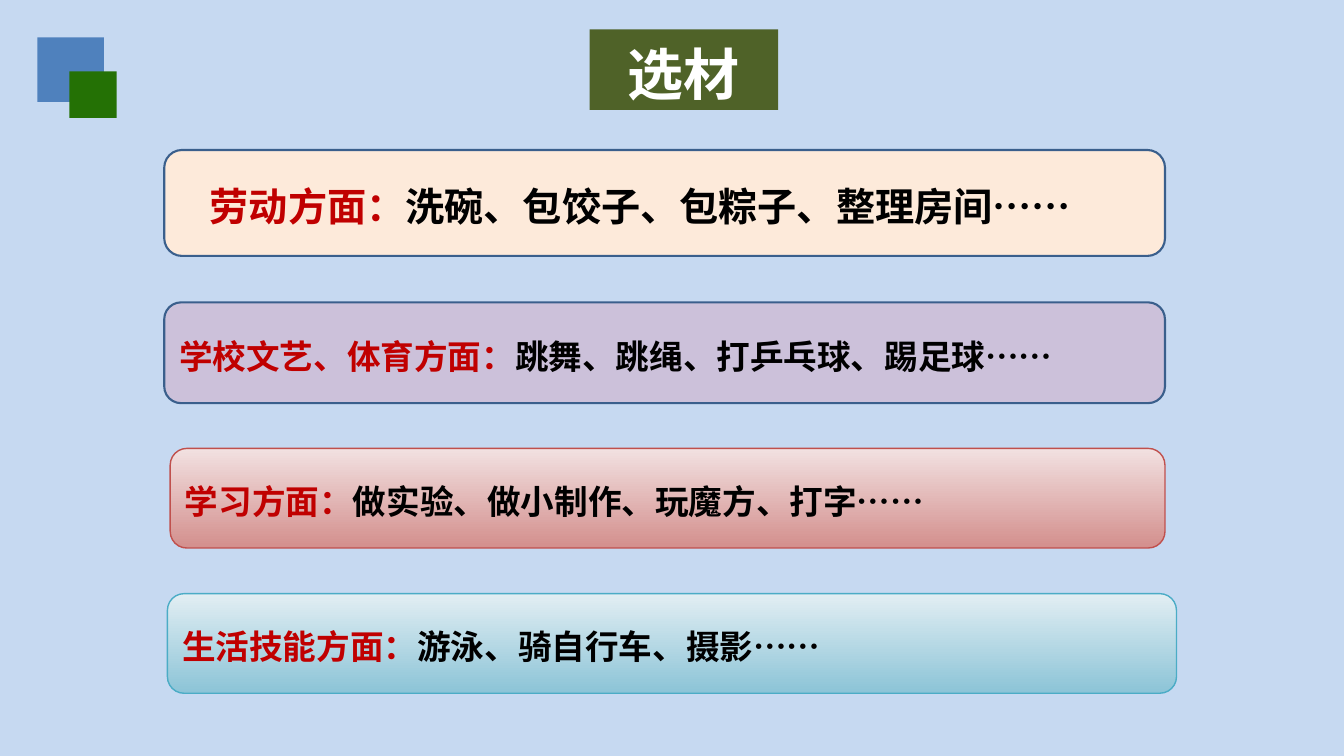
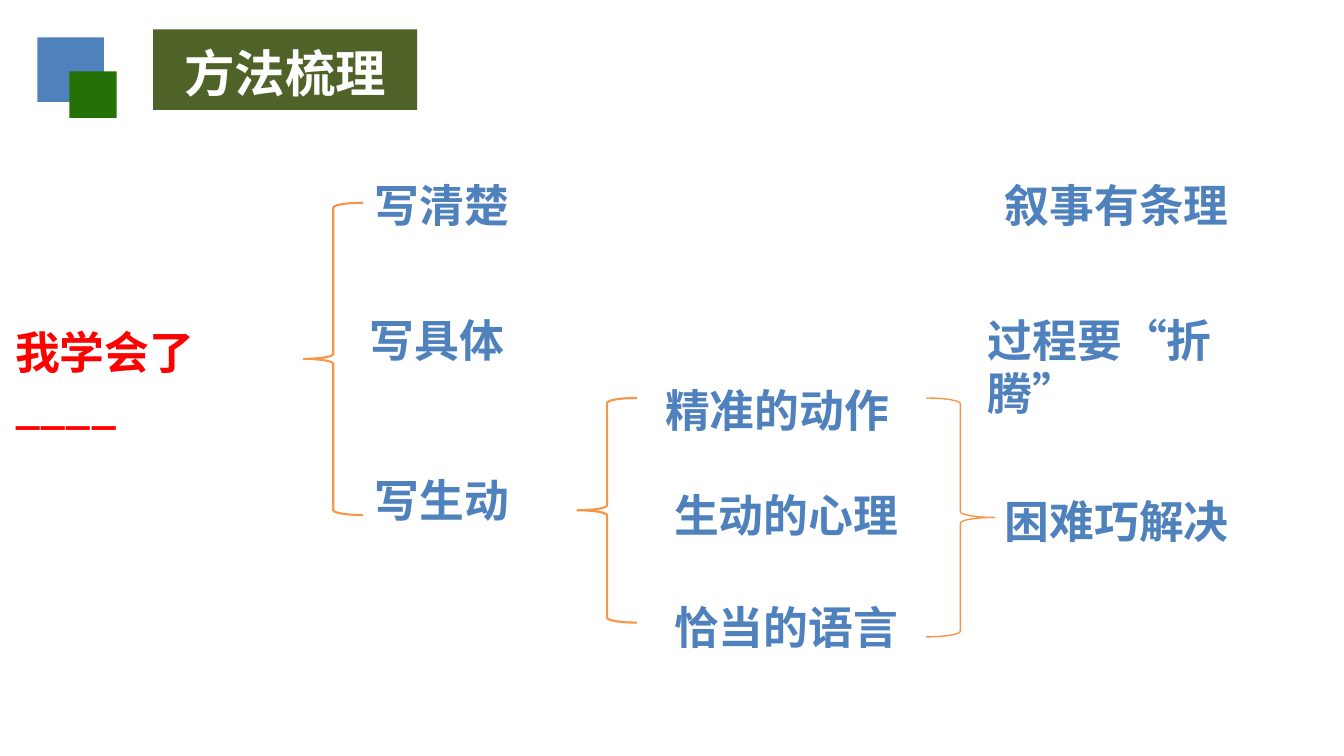
from lxml import etree
from pptx import Presentation
from pptx import util as u
from pptx.dml.color import RGBColor
from pptx.enum import lang, shapes, text
from pptx.oxml.ns import qn

FONT = "Noto Sans CJK SC"
HUES = {
    "sky": "C6D9F1", "white": "FFFFFF", "black": "000000", "olive": "4F6228",
    "blue": "4F81BD", "green": "247105", "navy": "3A5F8C", "crimson": "C00000",
    "red": "FF0000", "orange": "F79646", "peach": "FDEADA", "lilac": "CCC1DA",
    "brick": "C0504D", "rose": "F2E1E1", "coral": "D38F8D",
    "teal": "4BACC6", "ice": "E2EEF3", "aqua": "8CC4D7",
}
KIND = shapes.MSO_SHAPE
CARDS = [
    ((4.14, 3.78, 25.22, 2.67), ["peach"], "navy", 1.5, 28, 1.02,
     "劳动方面：", "洗碗、包饺子、包粽子、整理房间……"),
    ((4.14, 7.62, 25.22, 2.54), ["lilac"], "navy", 1.5, 24, 0.25,
     "学校文艺、体育方面：", "跳舞、跳绳、打乒乓球、踢足球……"),
    ((4.29, 11.3, 25.07, 2.51), ["rose", "coral"], "brick", 1, 24, 0.25,
     "学习方面：", "做实验、做小制作、玩魔方、打字……"),
    ((4.22, 14.96, 25.43, 2.51), ["ice", "aqua"], "teal", 1, 24, 0.25,
     "生活技能方面：", "游泳、骑自行车、摄影……"),
]
ROOT = ((0.13, 7.98, 5.5, 3), "我学会了____")
LABELS = [
    ((9.19, 4.29, 4.2, 1.63), "写清楚"),
    ((9.07, 7.67, 4.2, 1.63), "写具体"),
    ((9.19, 11.71, 4.2, 1.63), "写生动"),
    ((16.51, 9.45, 6.5, 1.63), "精准的动作"),
    ((16.74, 12.09, 6.5, 1.63), "生动的心理"),
    ((16.74, 14.91, 6.5, 1.63), "恰当的语言"),
    ((25.07, 4.29, 6.6, 1.63), "叙事有条理"),
    ((24.64, 7.67, 6.6, 3), "过程要“折腾”"),
    ((25.07, 12.24, 6.6, 1.63), "困难巧解决"),
]
BRACES = [
    ((7.65, 5.11, 1.5, 7.87), KIND.LEFT_BRACE, 1.5),
    ((14.55, 10.03, 1.5, 5.66), KIND.LEFT_BRACE, 1.5),
    ((23.34, 10.03, 1.73, 6.02), KIND.RIGHT_BRACE, 1),
]


def rgb(hue):
    """Return the named colour."""
    return RGBColor.from_string(HUES[hue])


def paint(fill, hues):
    """Fill with one colour, or with a gradient from top to bottom."""
    if len(hues) == 1:
        fill.solid()
        fill.fore_color.rgb = rgb(hues[0])
        return
    fill.gradient()
    fill.gradient_angle = 270
    for stop, hue in zip(fill.gradient_stops, hues):
        stop.color.rgb = rgb(hue)


def write(shape, runs, size=32, align="LEFT", anchor="TOP", left=0.25):
    """Write (text, colour) runs as one paragraph in a shape."""
    frame = shape.text_frame
    frame.word_wrap = True
    frame.auto_size = text.MSO_AUTO_SIZE.NONE
    frame.vertical_anchor = text.MSO_ANCHOR[anchor]
    frame.margin_left, frame.margin_right = u.Cm(left), u.Cm(0.25)
    frame.margin_top, frame.margin_bottom = u.Cm(0.2), u.Cm(0.05)
    para = frame.paragraphs[0]
    para.alignment = text.PP_ALIGN[align]
    para.line_spacing = u.Pt(size * 1.2)
    for words, hue in runs:
        run = para.add_run()
        run.text = words
        font = run.font
        font.size, font.bold, font.name = u.Pt(size), True, FONT
        font.color.rgb = rgb(hue)
        font.language_id = lang.MSO_LANGUAGE_ID.SIMPLIFIED_CHINESE
        east = etree.SubElement(run._r.get_or_add_rPr(), qn("a:ea"))
        east.set("typeface", FONT)


def draw(host, kind, box, hues=(), line=None, width=1):
    """Add a preset shape in a box, with optional fill and line."""
    shape = host.add_shape(kind, *map(u.Cm, box))
    shape.shadow.inherit = False
    if hues:
        paint(shape.fill, hues)
    else:
        shape.fill.background()
    if line:
        shape.line.color.rgb = rgb(line)
        shape.line.width = u.Pt(width)
    else:
        shape.line.fill.background()
    return shape


def label(slide, box, words, hue="blue"):
    """Add a bold text label."""
    write(slide.shapes.add_textbox(*map(u.Cm, box)), [(words, hue)])


def badge(title, box, words, size):
    """Turn the title placeholder into a rounded badge."""
    title.left, title.top, title.width, title.height = map(u.Cm, box)
    form = etree.SubElement(title.element.spPr, qn("a:prstGeom"), prst="roundRect")
    etree.SubElement(form, qn("a:avLst"))
    paint(title.fill, ["olive"])
    write(title, [(words, "white")], size=size, align="CENTER", anchor="MIDDLE")


def mark(slide, x, y):
    """Draw the two corner squares as a group."""
    group = slide.shapes.add_group_shape().shapes
    draw(group, KIND.RECTANGLE, (x, y, 1.68, 1.63), ["blue"])
    draw(group, KIND.RECTANGLE, (x + 0.81, y + 0.86, 1.19, 1.17), ["green"])


def start(deck, back, box, words, size):
    """Add a slide with its background, badge and mark."""
    slide = deck.slides.add_slide(deck.slide_layouts[5])
    paint(slide.background.fill, [back])
    badge(slide.shapes.title, box, words, size)
    mark(slide, 0.94, 0.94)
    return slide


def card(slide, box, hues, line, width, size, left, head, body):
    """Draw a rounded card with a red head and black text."""
    shape = draw(slide.shapes, KIND.FLOWCHART_ALTERNATE_PROCESS, box, hues, line, width)
    write(shape, [(head, "crimson"), (body, "black")], size=size, anchor="MIDDLE", left=left)


def topics(deck):
    """Build the slide of topic cards."""
    slide = start(deck, "sky", (14.86, 0.74, 4.75, 2.03), "选材", 40)
    for item in CARDS:
        card(slide, *item)


def methods(deck):
    """Build the slide of the method tree."""
    slide = start(deck, "white", (3.86, 0.74, 6.65, 2.03), "方法梳理", 36)
    for box, kind, width in BRACES:
        draw(slide.shapes, kind, box, line="orange", width=width)
    label(slide, *ROOT, hue="red")
    for box, words in LABELS:
        label(slide, box, words)


def main():
    """Build and save the deck."""
    deck = Presentation()
    deck.slide_width, deck.slide_height = u.Cm(33.87), u.Cm(19.05)
    topics(deck)
    methods(deck)
    deck.save("out.pptx")


if __name__ == "__main__":
    main()
